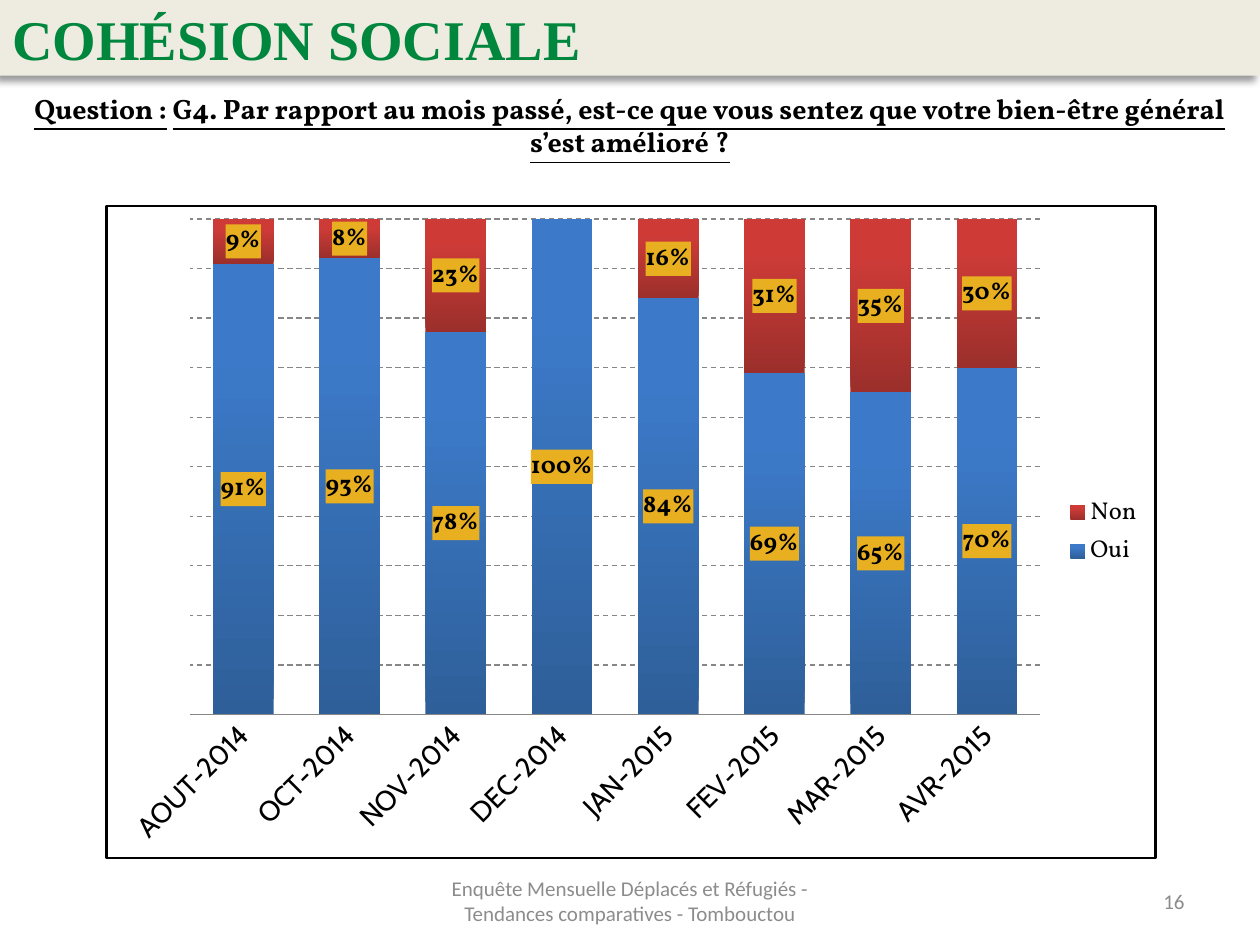
from lxml import etree
from pptx import Presentation
from pptx import util as u
from pptx.chart.data import CategoryChartData
from pptx.dml.color import RGBColor
from pptx.enum import chart as charts, dml, shapes, text
from pptx.oxml import parse_xml
from pptx.oxml.ns import nsdecls, qn

MONTHS = ["AOUT-2014", "OCT-2014", "NOV-2014", "DEC-2014",
          "JAN-2015", "FEV-2015", "MAR-2015", "AVR-2015"]
OUI = [0.91, 0.93, 0.78, 1, 0.84, 0.69, 0.65, 0.7]
NON = [0.09, 0.08, 0.23, 0, 0.16, 0.31, 0.35, 0.3]
GRADIENTS = {"Oui": ("2E5F99", "3C7AC9"), "Non": ("9C2F2C", "CE3B37")}


def colour(value):
    return RGBColor.from_string(value)


def chart_xml(body):
    return parse_xml(body.replace(">", " " + nsdecls("c", "a") + ">", 1))


class SlideBuilder:
    black = "000000"
    green = "00863D"
    beige = "EEECE1"
    grey = "8C8C8C"
    line_grey = "868686"
    label_gold = "E8AF20"
    serif = "Vollkorn"

    def __init__(self, presentation):
        self.slide = presentation.slides.add_slide(presentation.slide_layouts[6])

    def style(self, font, name, size, value=black, bold=False):
        font.name = name
        font.size = u.Pt(size)
        font.bold = bold
        font.color.rgb = colour(value)

    def fill_text(self, shape, runs, name, size, value, align, bold=False):
        frame = shape.text_frame
        frame.word_wrap = True
        frame.vertical_anchor = text.MSO_ANCHOR.MIDDLE
        paragraph = frame.paragraphs[0]
        paragraph.alignment = align
        for words, underlined in runs:
            run = paragraph.add_run()
            run.text = words
            self.style(run.font, name, size, value, bold)
            run.font.underline = underlined

    def text_box(self, box, runs, name, size, value, align, bold=False):
        shape = self.slide.shapes.add_textbox(*map(u.Pt, box))
        self.fill_text(shape, runs, name, size, value, align, bold)

    def banner(self, box, words):
        shape = self.slide.shapes.add_shape(shapes.MSO_SHAPE.RECTANGLE, *map(u.Pt, box))
        shape.shadow.inherit = False
        shape.fill.solid()
        shape.fill.fore_color.rgb = colour(self.beige)
        shape.line.fill.background()
        effects = shape.element.spPr.find(qn("a:effectLst"))
        shadow = etree.SubElement(effects, qn("a:outerShdw"), blurRad=str(u.Pt(4)),
                                  dist=str(u.Pt(4)), dir="8100000", rotWithShape="0")
        tint = etree.SubElement(shadow, qn("a:srgbClr"), val=self.black)
        etree.SubElement(tint, qn("a:alpha"), val="40000")
        self.fill_text(shape, [(words, False)], "Times New Roman", 32, self.green,
                       text.PP_ALIGN.LEFT, True)

    def series(self, series):
        fill = series.format.fill
        fill.gradient()
        fill.gradient_angle = 90
        for stop, value, position in zip(fill.gradient_stops, GRADIENTS[series.name], (0, 0.8)):
            stop.color.rgb = colour(value)
            stop.position = position
        labels = series.data_labels
        labels.show_value = True
        labels.number_format = "0%"
        labels.number_format_is_linked = False
        self.style(labels.font, self.serif, 14, bold=True)
        element = labels._element
        element.find(qn("c:numFmt")).addnext(chart_xml(
            f'<c:spPr><a:solidFill><a:srgbClr val="{self.label_gold}"/></a:solidFill></c:spPr>'))
        for index, value in enumerate(series.values):
            if value == 0:
                element.insert(0, chart_xml(
                    f'<c:dLbl><c:idx val="{index}"/><c:delete val="1"/></c:dLbl>'))

    def axes(self, chart):
        category = chart.category_axis
        category.major_tick_mark = charts.XL_TICK_MARK.NONE
        category.format.line.color.rgb = colour(self.line_grey)
        self.style(category.tick_labels.font, "Cabin", 16)
        category._element.find(qn("c:txPr")).find(qn("a:bodyPr")).set("rot", "-2700000")
        value = chart.value_axis
        value.visible = False
        value.minimum_scale = 0
        value.maximum_scale = 1
        value.major_unit = 0.1
        value.tick_labels.number_format = "0%"
        value.tick_labels.number_format_is_linked = False
        grid = value.major_gridlines.format.line
        grid.color.rgb = colour(self.line_grey)
        grid.width = u.Pt(0.75)
        grid.dash_style = dml.MSO_LINE.DASH

    def chart(self, box, categories, values, layout):
        data = CategoryChartData(number_format="0%")
        data.categories = categories
        for name, numbers in values.items():
            data.add_series(name, numbers)
        chart = self.slide.shapes.add_chart(
            charts.XL_CHART_TYPE.COLUMN_STACKED_100, *map(u.Pt, box), data).chart
        chart.has_title = False
        self.style(chart.font, "Calibri", 10)
        chart.has_legend = True
        chart.legend.position = charts.XL_LEGEND_POSITION.RIGHT
        chart.legend.include_in_layout = False
        self.style(chart.legend.font, self.serif, 14)
        plot = chart.plots[0]
        plot.gap_width = 75
        plot.overlap = 100
        plot.vary_by_categories = False
        for series in plot.series:
            self.series(series)
        self.axes(chart)

        area = chart._chartSpace.chart.plotArea
        for old in area.findall(qn("c:layout")):
            area.remove(old)
        sizes = "".join(f'<c:{key} val="{size}"/>' for key, size in layout.items())
        area.insert(0, chart_xml(
            '<c:layout><c:manualLayout><c:layoutTarget val="inner"/>'
            '<c:xMode val="edge"/><c:yMode val="edge"/>'
            f'{sizes}</c:manualLayout></c:layout>'))
        chart._chartSpace.chart.addnext(chart_xml(
            f'<c:spPr><a:noFill/><a:ln w="{u.Pt(1.5)}"><a:solidFill>'
            f'<a:srgbClr val="{self.black}"/></a:solidFill></a:ln></c:spPr>'))


def main():
    presentation = Presentation()
    presentation.slide_width = u.Pt(720)
    presentation.slide_height = u.Pt(540)
    builder = SlideBuilder(presentation)
    align = text.PP_ALIGN
    builder.text_box((516, 500.5, 168, 28.75), [("16", False)],
                     "Calibri", 12, builder.grey, align.RIGHT)
    builder.text_box((246, 500.5, 228, 28.75),
                     [("Enquête Mensuelle Déplacés et Réfugiés - "
                       "Tendances comparatives - Tombouctou", False)],
                     "Calibri", 12, builder.grey, align.CENTER)
    builder.banner((0, 0, 720, 43.2), "COHÉSION SOCIALE")
    builder.text_box((0, 48.25, 720, 46),
                     [("Question :", True), (" ", False),
                      ("G4. Par rapport au mois passé, est-ce que vous sentez que "
                       "votre bien-être général s’est amélioré ?", True)],
                     builder.serif, 16, builder.black, align.CENTER, True)
    builder.chart((60, 117, 601, 374), MONTHS, {"Oui": OUI, "Non": NON},
                  {"x": 0.08, "y": 0.02, "w": 0.81, "h": 0.76})
    presentation.save("out.pptx")


if __name__ == "__main__":
    main()
